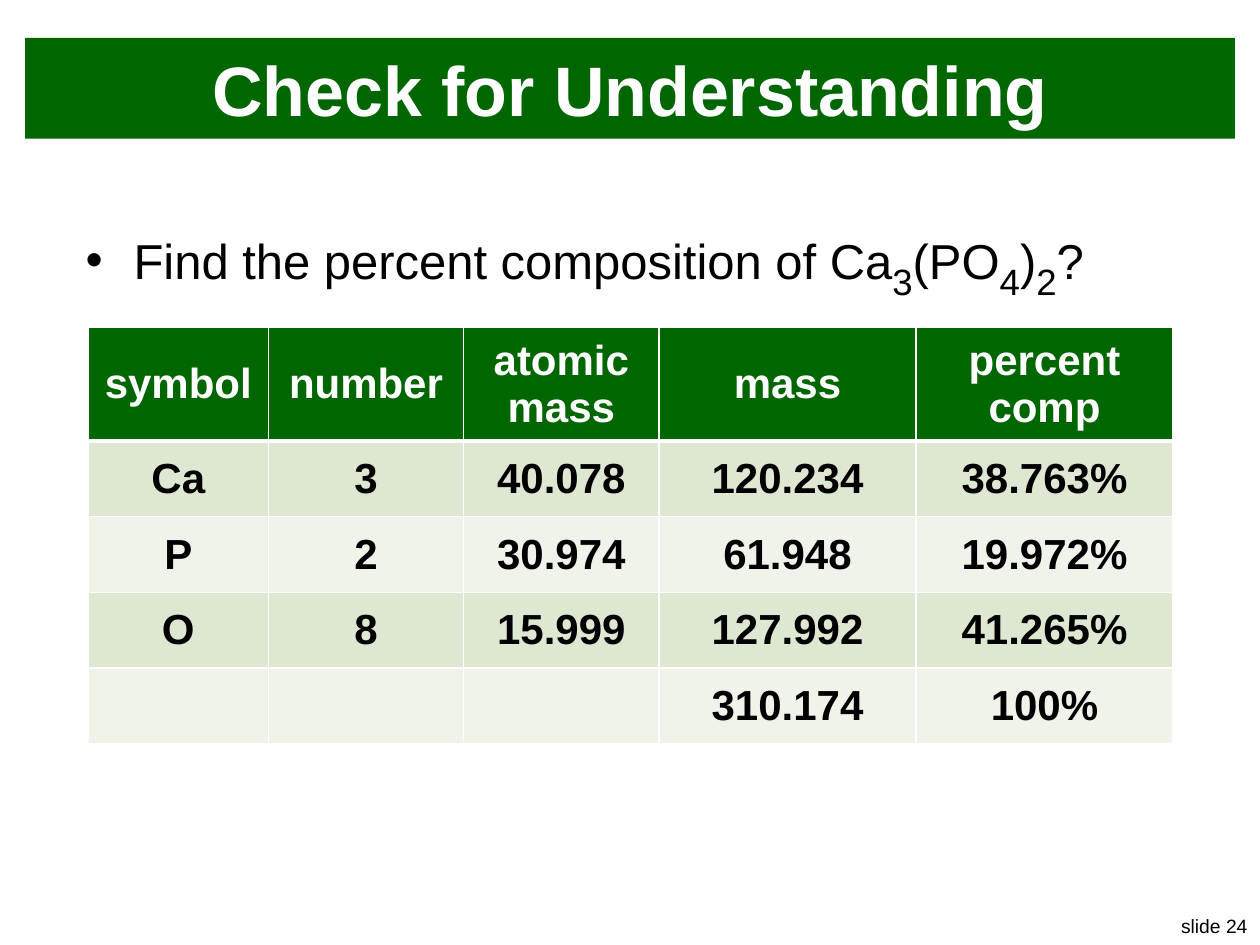
from dataclasses import dataclass

from lxml import etree
from pptx import Presentation
from pptx import util as u
from pptx.dml.color import RGBColor
from pptx.enum import text
from pptx.oxml.ns import qn


@dataclass(frozen=True)
class Theme:
    font: str = "Arial"
    green: str = "006600"
    white: str = "FFFFFF"
    black: str = "000000"
    bands: tuple = ("DEE7D1", "EFF3EA")
    title_size: int = 40
    question_size: int = 28
    subscript_size: int = 36
    table_size: int = 24
    number_size: int = 11


THEME = Theme()
QUESTION = [("Find the percent composition of Ca", False), ("3", True),
            ("(PO", False), ("4", True), (")", False), ("2", True), ("?", False)]
COLUMN_WIDTHS = (1.43, 1.55, 1.55, 2.04, 2.04)
ROW_HEIGHT = 0.6
COMPOSITION = [
    ("symbol", "number", "atomic mass", "mass", "percent comp"),
    ("Ca", "3", "40.078", "120.234", "38.763%"),
    ("P", "2", "30.974", "61.948", "19.972%"),
    ("O", "8", "15.999", "127.992", "41.265%"),
    ("", "", "", "310.174", "100%"),
]


def place(shape, left, top, width, height):
    shape.left, shape.top = u.Inches(left), u.Inches(top)
    shape.width, shape.height = u.Inches(width), u.Inches(height)


def paint(filled, color):
    filled.fill.solid()
    filled.fill.fore_color.rgb = RGBColor.from_string(color)


def add_run(paragraph, wording, size, color, bold=False):
    run = paragraph.add_run()
    run.text = wording
    run.font.name = THEME.font
    run.font.size = u.Pt(size)
    run.font.bold = bold
    run.font.color.rgb = RGBColor.from_string(color)
    return run


def add_title(slide, wording):
    title = slide.shapes.title
    place(title, 0.2, 0.3, 9.6, 0.8)
    paint(title, THEME.green)
    title.text_frame.auto_size = text.MSO_AUTO_SIZE.NONE
    title.text_frame.vertical_anchor = text.MSO_ANCHOR.MIDDLE
    heading = title.text_frame.paragraphs[0]
    heading.alignment = text.PP_ALIGN.CENTER
    add_run(heading, wording, THEME.title_size, THEME.white, bold=True)


def add_question(slide, parts):
    """Write the bulleted question; parts are (wording, is_subscript)."""
    body = slide.placeholders[1]
    place(body, 0.58, 1.67, 8.85, 0.74)
    body.text_frame.auto_size = text.MSO_AUTO_SIZE.NONE
    question = body.text_frame.paragraphs[0]
    question.space_before = u.Pt(12)
    properties = question._p.get_or_add_pPr()
    properties.set("marL", str(u.Inches(0.38)))
    properties.set("indent", str(u.Inches(-0.38)))
    etree.SubElement(properties, qn("a:buChar"), char="•")
    for wording, is_subscript in parts:
        size = THEME.subscript_size if is_subscript else THEME.question_size
        run = add_run(question, wording, size, THEME.black)
        if is_subscript:
            run.font._element.set("baseline", "-25000")


def add_border(cell, side, points):
    line = etree.SubElement(cell._tc.get_or_add_tcPr(), qn(f"a:ln{side}"),
                            w=str(u.Pt(points)))
    fill = etree.SubElement(line, qn("a:solidFill"))
    etree.SubElement(fill, qn("a:srgbClr"), val=THEME.white)


def format_cell(cell, wording, row):
    """Style one cell, with a heavy rule between the header and row 1."""
    is_header = row == 0
    heavy_side = {0: "B", 1: "T"}.get(row)
    for side in "LRTB":
        add_border(cell, side, 3 if side == heavy_side else 1)
    paint(cell, THEME.green if is_header else THEME.bands[(row - 1) % 2])
    cell.vertical_anchor = text.MSO_ANCHOR.MIDDLE
    if wording:
        entry = cell.text_frame.paragraphs[0]
        entry.alignment = text.PP_ALIGN.CENTER
        add_run(entry, wording, THEME.table_size,
                THEME.white if is_header else THEME.black, bold=True)


def add_composition_table(slide, rows):
    frame = slide.shapes.add_table(
        len(rows), len(COLUMN_WIDTHS), u.Inches(0.7), u.Inches(2.6),
        u.Inches(sum(COLUMN_WIDTHS)), u.Inches(ROW_HEIGHT * len(rows)))
    table = frame.table
    for column, width in zip(table.columns, COLUMN_WIDTHS):
        column.width = u.Inches(width)
    for r, entries in enumerate(rows):
        for c, wording in enumerate(entries):
            format_cell(table.cell(r, c), wording, r)


def add_slide_number(slide, wording):
    box = slide.shapes.add_textbox(
        u.Inches(9.25), u.Inches(7.21), u.Inches(0.75), u.Inches(0.29))
    box.text_frame.word_wrap = False
    label = box.text_frame.paragraphs[0]
    label.alignment = text.PP_ALIGN.RIGHT
    add_run(label, wording, THEME.number_size, THEME.black)


def main():
    deck = Presentation()
    deck.slide_width, deck.slide_height = u.Inches(10), u.Inches(7.5)
    slide = deck.slides.add_slide(deck.slide_layouts[1])
    add_slide_number(slide, "slide 24")
    add_title(slide, "Check for Understanding")
    add_composition_table(slide, COMPOSITION)
    add_question(slide, QUESTION)
    deck.save("out.pptx")


if __name__ == "__main__":
    main()
